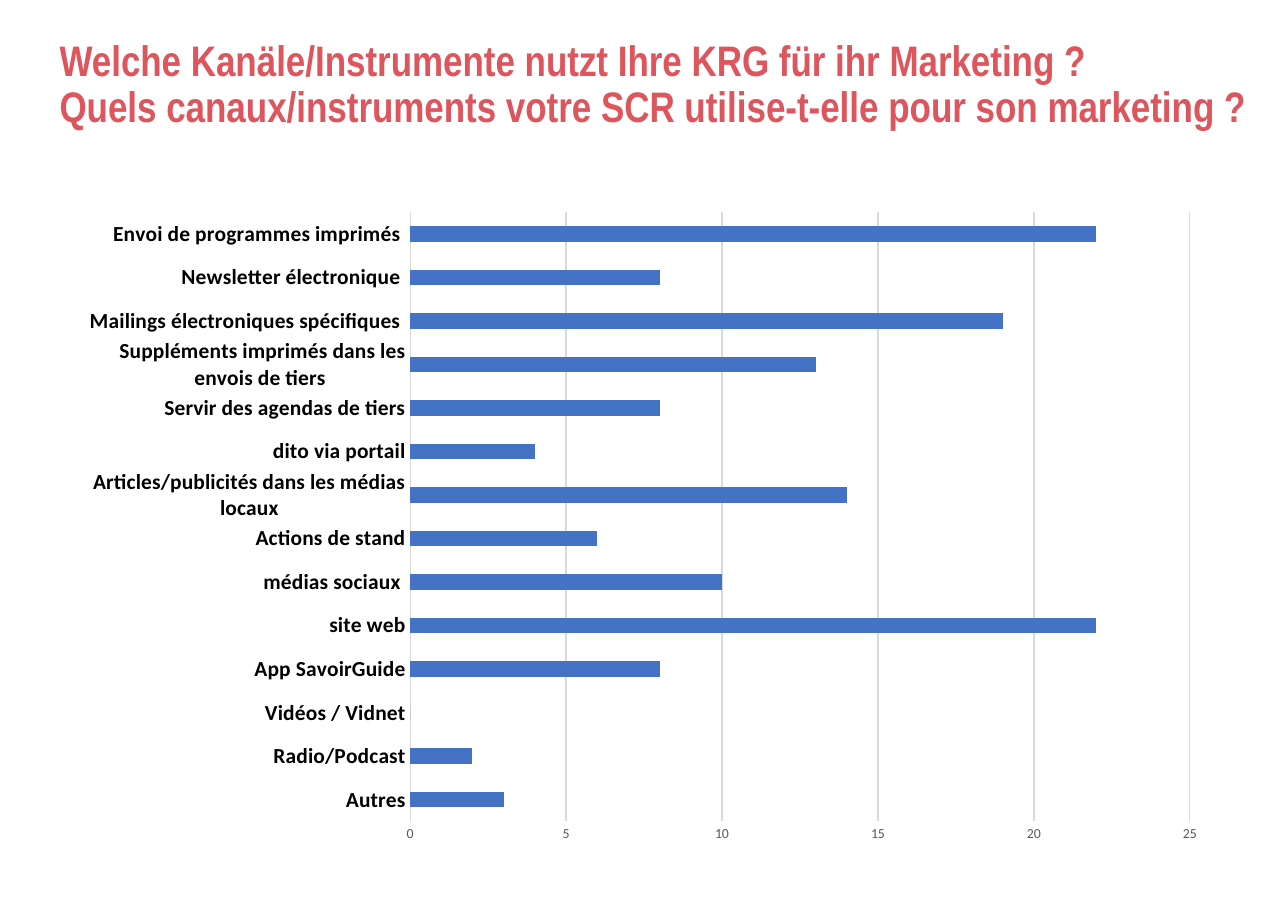
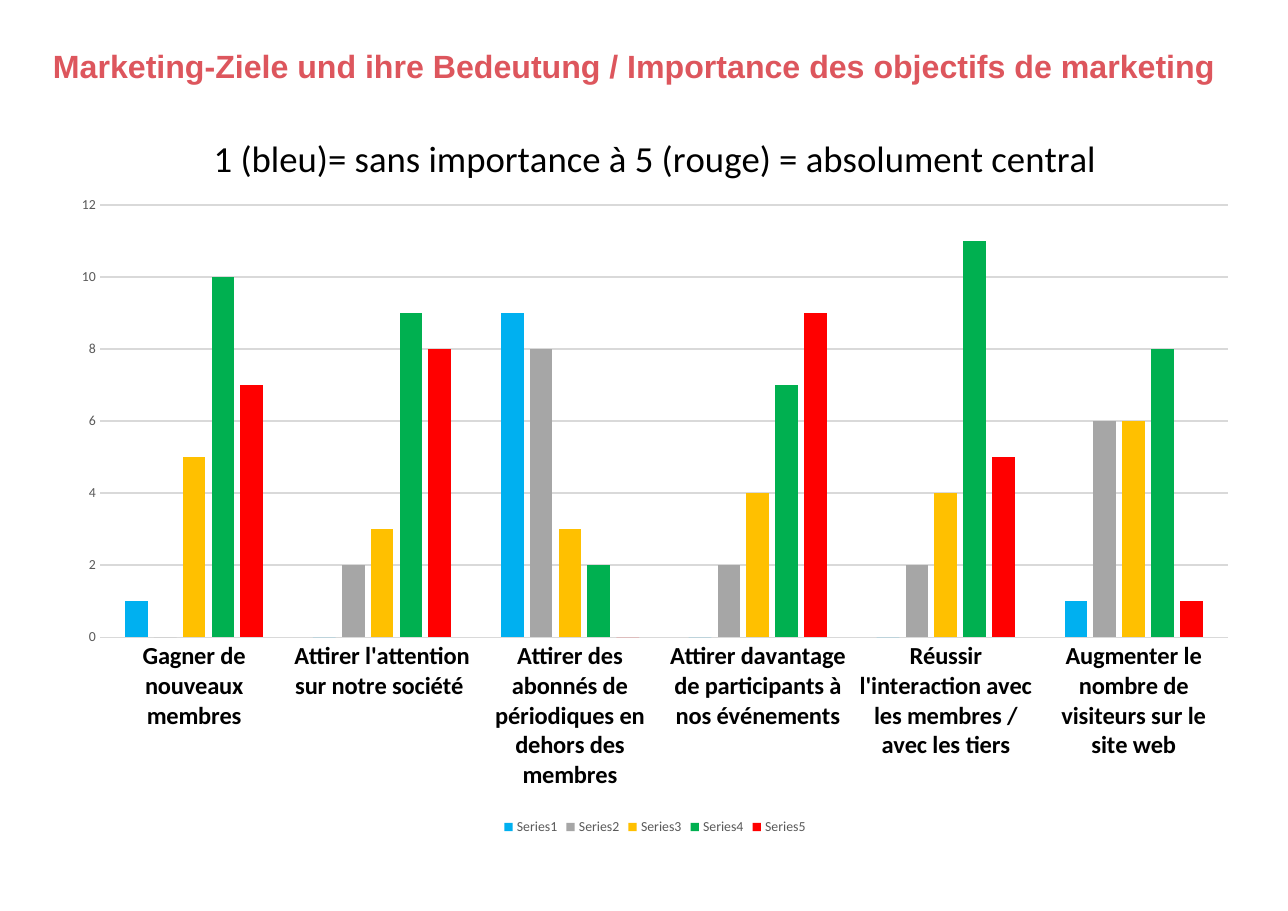
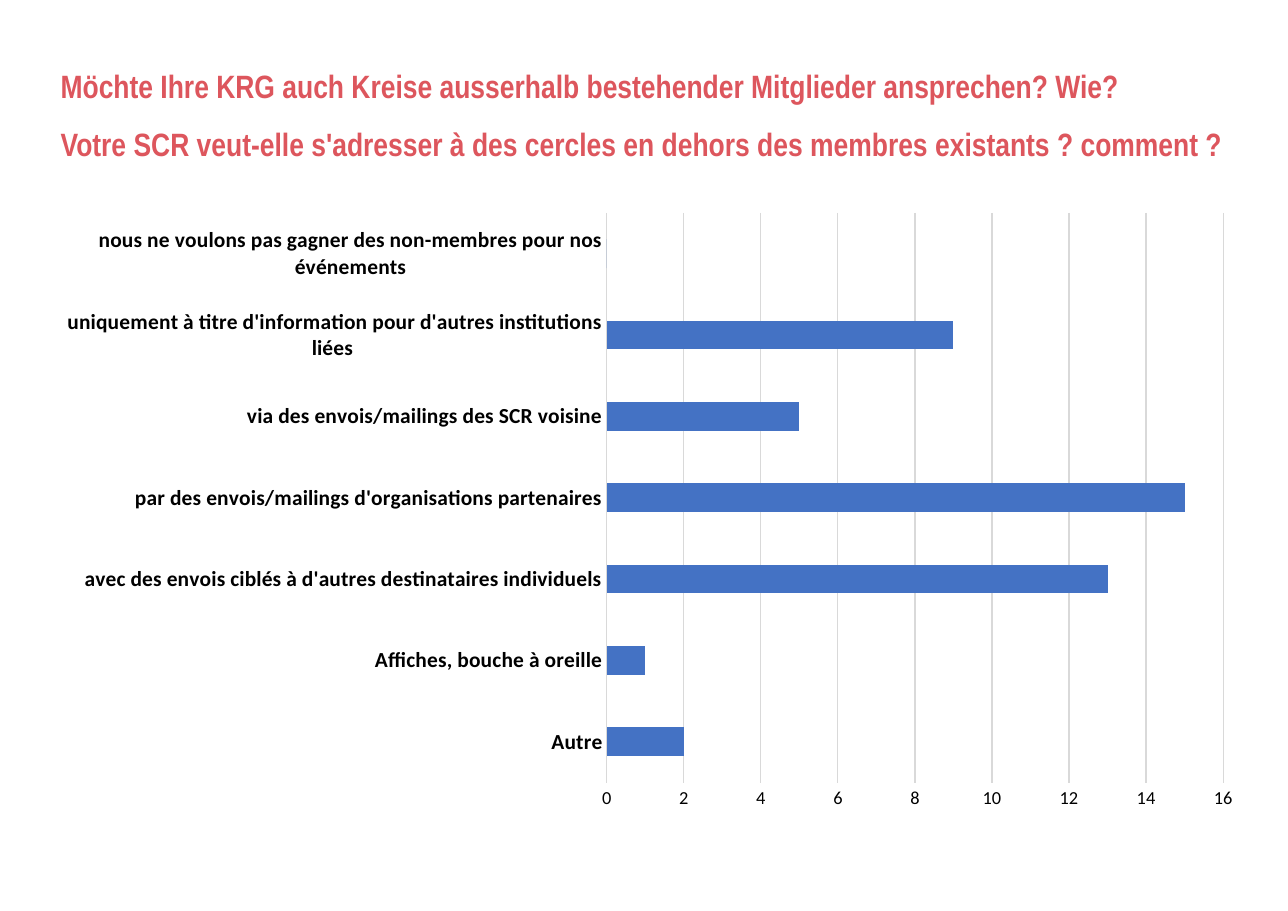
from lxml import etree
from pptx import Presentation
from pptx.chart.data import CategoryChartData
from pptx.dml.color import RGBColor
from pptx.enum.chart import XL_CHART_TYPE, XL_LEGEND_POSITION, XL_TICK_MARK
from pptx.enum.text import MSO_ANCHOR, MSO_AUTO_SIZE, PP_ALIGN
from pptx.oxml.ns import qn
from pptx.util import Inches, Pt

# Shared look
TITLE_RED = "DD565D"
BLACK = "000000"
GREY = "595959"
GRID = "D9D9D9"
BLUE = "4472C4"
RATING_COLORS = ["00B0F0", "A6A6A6", "FFC000", "00B050", "FF0000"]
CHART_FONT = "Calibri"

# Survey answers, from the bottom bar upwards
CHANNELS = [
    ("Autres", 3),
    ("Radio/Podcast", 2),
    ("Vidéos / Vidnet", 0),
    ("App SavoirGuide", 8),
    ("site web", 22),
    ("médias sociaux ", 10),
    ("Actions de stand", 6),
    ("Articles/publicités dans les médias locaux", 14),
    ("dito via portail", 4),
    ("Servir des agendas de tiers", 8),
    ("Suppléments imprimés dans les envois de tiers ", 13),
    ("Mailings électroniques spécifiques ", 19),
    ("Newsletter électronique ", 8),
    ("Envoi de programmes imprimés ", 22),
]
OUTREACH = [
    ("Autre", 2),
    ("Affiches, bouche à oreille", 1),
    ("avec des envois ciblés à d'autres destinataires individuels", 13),
    ("par des envois/mailings d'organisations partenaires", 15),
    ("via des envois/mailings des SCR voisine", 5),
    ("uniquement à titre d'information pour d'autres institutions liées ", 9),
    ("nous ne voulons pas gagner des non-membres pour nos événements", 0),
]
# Each goal with the number of answers for ratings 1 to 5
GOALS = [
    ("Gagner de nouveaux membres", (1, 0, 5, 10, 7)),
    ("Attirer l'attention sur notre société ", (0, 2, 3, 9, 8)),
    ("Attirer des abonnés de périodiques en dehors des membres", (9, 8, 3, 2, 0)),
    ("Attirer davantage de participants à nos événements", (0, 2, 4, 7, 9)),
    ("Réussir l'interaction avec les membres / avec les tiers", (0, 2, 4, 11, 5)),
    ("Augmenter le nombre de visiteurs sur le site web", (1, 6, 6, 8, 1)),
]


def rgb(color):
    return RGBColor.from_string(color)


def style_font(font, size, color=BLACK, bold=False, name=CHART_FONT):
    font.name, font.size, font.bold = name, Pt(size), bold
    font.color.rgb = rgb(color)


def style_line(line):
    line.color.rgb = rgb(GRID)
    line.width = Pt(0.75)


def add_slide(prs, lines, box, size, font="Arial Narrow", spacing=0.9):
    """Add a title-only slide; the title lines are parted by line breaks."""
    s = prs.slides.add_slide(prs.slide_layouts[5])
    title = s.shapes.title
    title.left, title.top, title.width, title.height = map(Inches, box)
    tf = title.text_frame
    tf.word_wrap = True
    tf.auto_size = MSO_AUTO_SIZE.NONE
    tf.vertical_anchor = MSO_ANCHOR.MIDDLE
    p = tf.paragraphs[0]
    p.text = "\v".join(lines)
    p.alignment = PP_ALIGN.LEFT
    p.line_spacing = spacing
    for r in p.runs:
        style_font(r.font, size, TITLE_RED, True, font)
    return s


def place_plot(chart, area):
    """Fix the inner plot area, given as fractions of the chart."""
    plot_area = chart.element.find(".//" + qn("c:plotArea"))
    for old in plot_area.findall(qn("c:layout")):
        plot_area.remove(old)
    layout = etree.Element(qn("c:layout"))
    manual = etree.SubElement(layout, qn("c:manualLayout"))
    settings = [("layoutTarget", "inner"), ("xMode", "edge"), ("yMode", "edge")]
    settings += zip("xywh", area)
    for tag, value in settings:
        etree.SubElement(manual, qn("c:" + tag)).set("val", str(value))
    plot_area.insert(0, layout)


def style_axes(chart, cat_size, top, step, val_size, val_color):
    cat, val = chart.category_axis, chart.value_axis
    for axis in (cat, val):
        axis.major_tick_mark = axis.minor_tick_mark = XL_TICK_MARK.NONE
    style_font(cat.tick_labels.font, cat_size, bold=True)
    style_line(cat.format.line)
    cat.has_major_gridlines = False
    style_font(val.tick_labels.font, val_size, val_color)
    val.format.line.fill.background()
    val.has_major_gridlines = True
    style_line(val.major_gridlines.format.line)
    val.minimum_scale, val.maximum_scale, val.major_unit = 0, top, step


def add_bars(s, kind, box, area, cats, series, colors, gap, overlap, **axes):
    data = CategoryChartData()
    data.categories = cats
    for name, values in series:
        data.add_series(name, values)
    chart = s.shapes.add_chart(kind, *map(Inches, box), data).chart
    style_font(chart.font, 10)
    chart.has_title = chart.has_legend = False
    plot = chart.plots[0]
    plot.vary_by_categories = False
    plot.gap_width, plot.overlap = gap, overlap
    for ser, color in zip(plot.series, colors):
        ser.format.fill.solid()
        ser.format.fill.fore_color.rgb = rgb(color)
    style_axes(chart, **axes)
    place_plot(chart, area)
    return chart


def add_answer_chart(s, box, area, answers, top, step, val_size, val_color):
    """Horizontal bars, one per answer."""
    cats, values = zip(*answers)
    add_bars(s, XL_CHART_TYPE.BAR_CLUSTERED, box, area, cats,
             [("Series 1", values)], [BLUE], gap=182, overlap=0, cat_size=14,
             top=top, step=step, val_size=val_size, val_color=val_color)


def add_goal_chart(s, box, area):
    """Columns for ratings 1 to 5, grouped by goal."""
    cats, ratings = zip(*GOALS)
    series = [(f"Series{i}", v) for i, v in enumerate(zip(*ratings), 1)]
    chart = add_bars(s, XL_CHART_TYPE.COLUMN_CLUSTERED, box, area, cats,
                     series, RATING_COLORS, gap=219, overlap=-27, cat_size=16,
                     top=12, step=2, val_size=9, val_color=GREY)
    chart.has_title = True
    p = chart.chart_title.text_frame.paragraphs[0]
    p.text = "1 (bleu)= sans importance à 5 (rouge) = absolument central"
    style_font(p.runs[0].font, 24)
    chart.chart_title.include_in_layout = False
    chart.has_legend = True
    chart.legend.position = XL_LEGEND_POSITION.BOTTOM
    chart.legend.include_in_layout = False
    style_font(chart.legend.font, 9, GREY)


def main():
    prs = Presentation()
    prs.slide_width, prs.slide_height = Inches(11.69), Inches(8.27)

    # Marketing channels
    s = add_slide(prs, [
        "Welche Kanäle/Instrumente nutzt Ihre KRG für ihr Marketing ?",
        "Quels canaux/instruments votre SCR utilise-t-elle pour son marketing ?",
    ], (0.44, 0.26, 11.05, 1.03), 27.9)
    add_answer_chart(s, (0.59, 1.39, 10.44, 6.3), (0.3, 0.085, 0.678, 0.878),
                     CHANNELS, top=25, step=5, val_size=9, val_color=GREY)

    # Marketing goals
    s = add_slide(prs, [
        "Marketing-Ziele und ihre Bedeutung / Importance des objectifs de marketing",
    ], (0.38, 0.35, 10.88, 0.54), 21, font="Arial")
    add_goal_chart(s, (0.53, 0.97, 10.83, 6.65), (0.035, 0.134, 0.945, 0.59))

    # Reaching people outside the membership
    s = add_slide(prs, [
        "Möchte Ihre KRG auch Kreise ausserhalb bestehender Mitglieder ansprechen? Wie?",
        "Votre SCR veut-elle s'adresser à des cercles en dehors des membres existants ? comment ?",
    ], (0.45, 0.46, 10.96, 0.99), 21.1, spacing=1.5)
    add_answer_chart(s, (0.4, 1.82, 11.01, 5.64), (0.464, 0.02, 0.508, 0.917),
                     OUTREACH, top=16, step=2, val_size=12, val_color=BLACK)

    prs.save("out.pptx")


if __name__ == "__main__":
    main()
